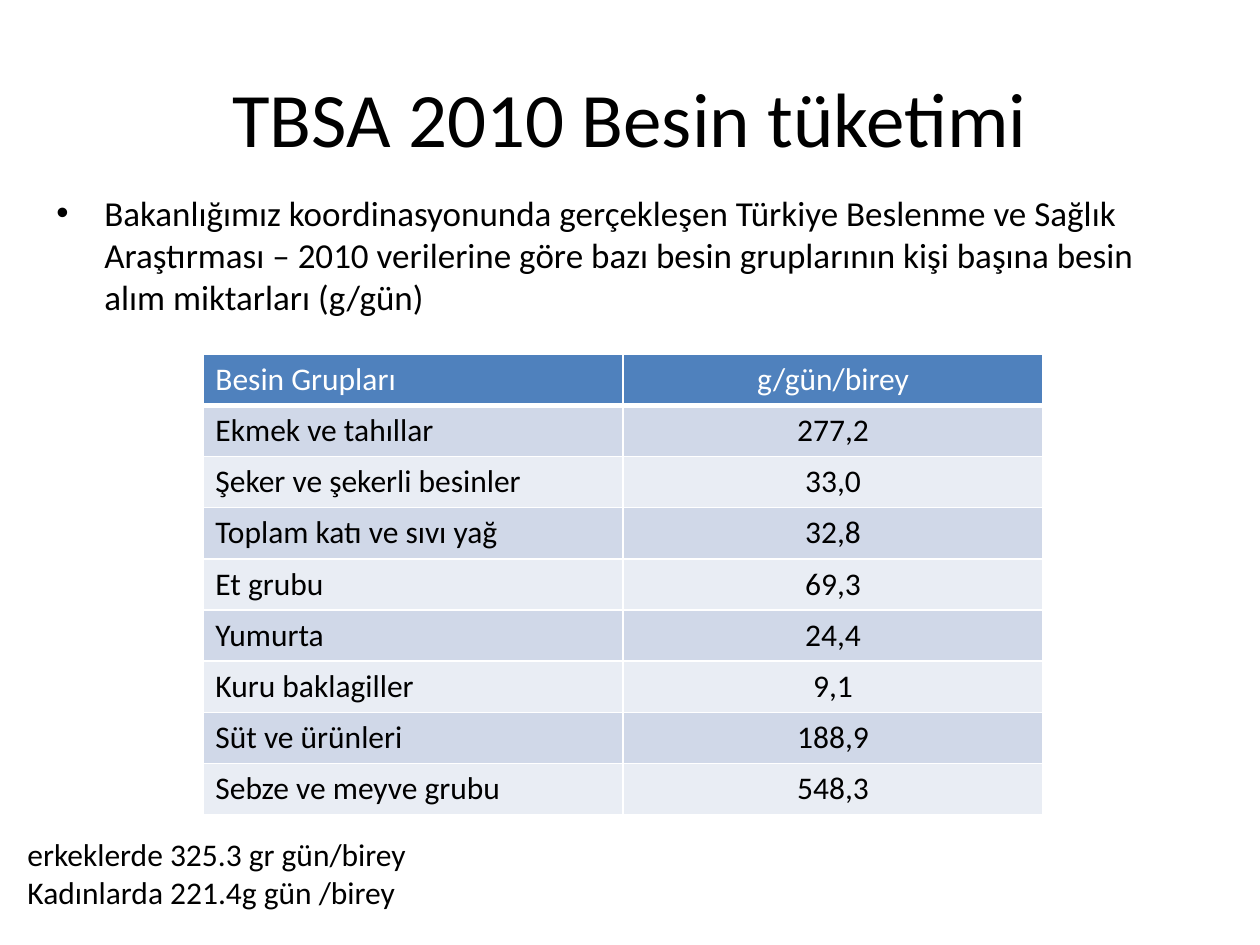
from lxml import etree
from pptx import Presentation
from pptx.dml.color import RGBColor
from pptx.enum.text import MSO_ANCHOR, PP_ALIGN
from pptx.oxml.ns import qn
from pptx.util import Inches, Pt

LEFT, CENTER = PP_ALIGN.LEFT, PP_ALIGN.CENTER
MIDDLE = MSO_ANCHOR.MIDDLE
TITLE_ONLY = 5
FONT = "Calibri"
COLORS = {
    "text": "000000",
    "white": "FFFFFF",
    "header": "4F81BD",
    "band_dark": "D0D8E8",
    "band_light": "E9EDF4",
}
FOOD_GROUPS = [
    ("Besin Grupları", "g/gün/birey"),
    ("Ekmek ve tahıllar", "277,2"),
    ("Şeker ve şekerli besinler", "33,0"),
    ("Toplam katı ve sıvı yağ", "32,8"),
    ("Et grubu", "69,3"),
    ("Yumurta", "24,4"),
    ("Kuru baklagiller", "9,1"),
    ("Süt ve ürünleri", "188,9"),
    ("Sebze ve meyve grubu", "548,3"),
]


class SlideBuilder:
    def __init__(self, presentation):
        layout = presentation.slide_layouts[TITLE_ONLY]
        self.slide = presentation.slides.add_slide(layout)

    def format_paragraph(self, paragraph, size, color="text", align=LEFT):
        paragraph.alignment = align
        paragraph.font.name = FONT
        paragraph.font.size = Pt(size)
        paragraph.font.color.rgb = RGBColor.from_string(COLORS[color])

    def title(self, text, left, top, width, height):
        shape = self.slide.shapes.title
        shape.left, shape.top = Inches(left), Inches(top)
        shape.width, shape.height = Inches(width), Inches(height)
        shape.text_frame.text = text
        shape.text_frame.vertical_anchor = MIDDLE
        self.format_paragraph(shape.text_frame.paragraphs[0], 44, align=CENTER)

    def text(self, lines, left, top, width, height, size, bullet=False):
        shape = self.slide.shapes.add_textbox(
            Inches(left), Inches(top), Inches(width), Inches(height))
        frame = shape.text_frame
        frame.word_wrap = True
        frame.text = "\n".join(lines)
        for paragraph in frame.paragraphs:
            if bullet:
                self.bullet(paragraph)
            self.format_paragraph(paragraph, size)

    def bullet(self, paragraph):
        paragraph.space_before = Pt(4)
        properties = paragraph._p.get_or_add_pPr()
        properties.set("marL", str(Inches(0.38)))
        properties.set("indent", str(-Inches(0.38)))
        etree.SubElement(properties, qn("a:buFont"), typeface="Arial")
        etree.SubElement(properties, qn("a:buChar"), char="•")

    def cell_borders(self, cell, bottom):
        properties = cell._tc.get_or_add_tcPr()
        widths = {"lnL": 1, "lnR": 1, "lnT": 1, "lnB": bottom}
        for side, width in widths.items():
            line = etree.SubElement(properties, qn(f"a:{side}"), w=str(Pt(width)))
            fill = etree.SubElement(line, qn("a:solidFill"))
            etree.SubElement(fill, qn("a:srgbClr"), val=COLORS["white"])

    def table(self, rows, left, top, width, height):
        table = self.slide.shapes.add_table(
            len(rows), len(rows[0]), Inches(left), Inches(top),
            Inches(width), Inches(height)).table
        for row_index, values in enumerate(rows):
            is_header = row_index == 0
            band = "band_dark" if row_index % 2 else "band_light"
            for column_index, value in enumerate(values):
                cell = table.cell(row_index, column_index)
                cell.text = value
                self.cell_borders(cell, bottom=3 if is_header else 1)
                cell.fill.solid()
                cell.fill.fore_color.rgb = RGBColor.from_string(
                    COLORS["header" if is_header else band])
                self.format_paragraph(
                    cell.text_frame.paragraphs[0], 18,
                    color="white" if is_header else "text",
                    align=CENTER if column_index else LEFT)
        # The header is set in regular weight
        table.first_row = False


def main():
    presentation = Presentation()
    presentation.slide_width = Inches(10)
    presentation.slide_height = Inches(7.5)
    builder = SlideBuilder(presentation)

    # Heading and introduction
    builder.title("TBSA 2010 Besin tüketimi", 0.5, 0.3, 9, 1.25)
    builder.text(
        ["Bakanlığımız koordinasyonunda gerçekleşen Türkiye Beslenme ve Sağlık "
         "Araştırması – 2010 verilerine göre bazı besin gruplarının kişi başına "
         "besin alım miktarları (g/gün)"],
        0.35, 1.47, 9, 4.95, size=20, bullet=True)

    # Daily intake by food group
    builder.table(FOOD_GROUPS, 1.61, 2.81, 6.67, 3.66)

    # Intake by sex
    builder.text(
        ["erkeklerde 325.3 gr gün/birey", "Kadınlarda 221.4g gün /birey"],
        0.12, 6.58, 5, 0.71, size=18)

    presentation.save("out.pptx")


if __name__ == "__main__":
    main()
